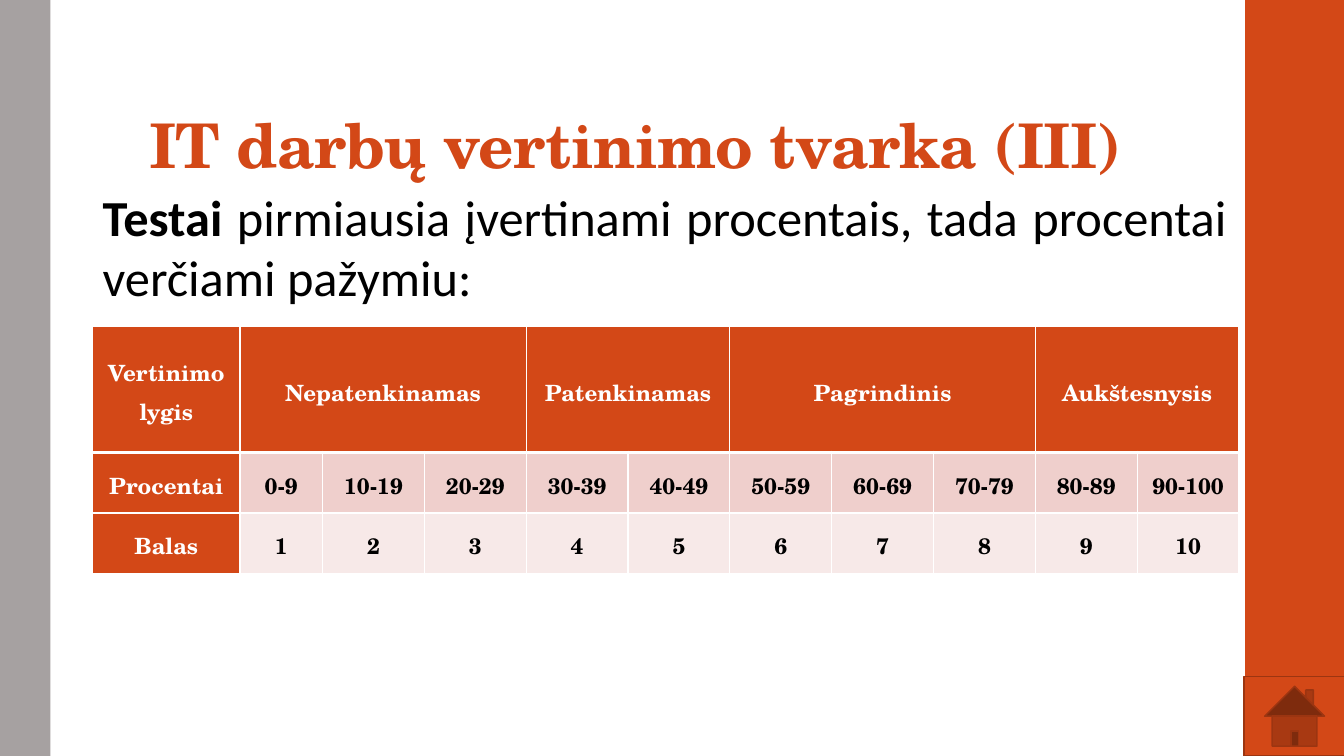
from lxml import etree
from pptx import Presentation
from pptx import util as u
from pptx.dml import color
from pptx.enum import shapes, text
from pptx.oxml import ns

ORANGE = "D34817"
SERIF = "TeX Gyre Schola"


def paint(target, value):
    if hasattr(target, "solid"):
        target.solid()
        target = target.fore_color
    else:
        target = target.color
    target.rgb = color.RGBColor.from_string(value)


def style(span, font, size, value, bold=True):
    span.font.name = font
    span.font.size = u.Pt(size)
    span.font.bold = bold
    paint(span.font, value)


deck = Presentation()
deck.slide_width = u.Inches(13.33)
deck.slide_height = u.Inches(7.5)
page = deck.slides.add_slide(deck.slide_layouts[5])

for kind, left, top, width, height, value in [
    (shapes.MSO_SHAPE.RECTANGLE, 12.35, 0, 1, 7.5, ORANGE),
    (shapes.MSO_SHAPE.RECTANGLE, 0, 0, 0.5, 7.5, "A6A1A1"),
    (shapes.MSO_SHAPE.ACTION_BUTTON_HOME, 12.34, 6.71, 1, 0.79, ORANGE),
]:
    shape = page.shapes.add_shape(
        kind, u.Inches(left), u.Inches(top), u.Inches(width), u.Inches(height))
    shape.shadow.inherit = False
    paint(shape.fill, value)
    if kind == shapes.MSO_SHAPE.ACTION_BUTTON_HOME:
        paint(shape.line, "9C3511")
        shape.line.width = u.Pt(1.1)
    else:
        shape.line.fill.background()

title = page.shapes.title
title.left, title.top = u.Inches(1.38), u.Inches(0.32)
title.width, title.height = u.Inches(10.6), u.Inches(1.53)
frame = title.text_frame
frame.text = "IT darbų vertinimo tvarka (III)"
frame.word_wrap = True
frame.auto_size = text.MSO_AUTO_SIZE.NONE
frame.vertical_anchor = text.MSO_ANCHOR.BOTTOM
frame.margin_top, frame.margin_bottom = u.Inches(0.03), u.Inches(0.05)
para = frame.paragraphs[0]
para.alignment = text.PP_ALIGN.LEFT
para.line_spacing = 0.9
style(para.runs[0], SERIF, 44, ORANGE)
para.runs[0].font._element.set("spc", "-50")

levels = [("Vertinimo lygis", 1), ("Nepatenkinamas", 3), ("Patenkinamas", 2),
          ("Pagrindinis", 3), ("Aukštesnysis", 2)]
header = [word for name, span in levels for word in [name] + [""] * (span - 1)]
percents = ["Procentai"] + [f"{low}-{low + 9}" for low in range(0, 90, 10)] + ["90-100"]
grades = ["Balas"] + [str(grade) for grade in range(1, 11)]
rows = [header, percents, grades]
row_fills = [ORANGE, "EFCFCC", "F7E9E8"]

table = page.shapes.add_table(
    3, 11, u.Inches(0.92), u.Inches(3.24), u.Inches(11.35), u.Inches(2.46)).table
for column, width in zip(table.columns, [1.46, 0.82] + [1.01] * 9):
    column.width = u.Inches(width)
for row, height in zip(table.rows, [1.25, 0.6, 0.6]):
    row.height = u.Inches(height)

for r, words in enumerate(rows):
    for c, word in enumerate(words):
        cell = table.cell(r, c)
        dark = r == 0 or c == 0
        paint(cell.fill, ORANGE if dark else row_fills[r])
        cell.vertical_anchor = text.MSO_ANCHOR.MIDDLE
        cell.margin_left = cell.margin_right = u.Inches(0.07)
        cell.margin_top = cell.margin_bottom = 0
        properties = cell._tc.get_or_add_tcPr()
        for place, side in enumerate(["lnL", "lnR", "lnT", "lnB"]):
            thick = (r, side) in [(0, "lnB"), (1, "lnT")]
            border = etree.Element(ns.qn(f"a:{side}"), w=str(u.Pt(3 if thick else 1)))
            fill = etree.SubElement(border, ns.qn("a:solidFill"))
            etree.SubElement(fill, ns.qn("a:srgbClr"), val="FFFFFF")
            properties.insert(place, border)
        if word:
            cell.text_frame.text = word
            para = cell.text_frame.paragraphs[0]
            para.alignment = text.PP_ALIGN.CENTER
            para.line_spacing = 1.15
            para.space_before, para.space_after = u.Pt(6), u.Pt(10)
            style(para.runs[0], SERIF, 16, "FFFFFF" if dark else "000000")

start = 0
for name, span in levels:
    if span > 1:
        table.cell(0, start).merge(table.cell(0, start + span - 1))
    start += span

box = page.shapes.add_textbox(
    u.Inches(0.92), u.Inches(1.79), u.Inches(11.35), u.Inches(1.31))
frame = box.text_frame
frame.word_wrap = True
frame.auto_size = text.MSO_AUTO_SIZE.SHAPE_TO_FIT_TEXT
frame.vertical_anchor = text.MSO_ANCHOR.MIDDLE
para = frame.paragraphs[0]
para.alignment = text.PP_ALIGN.JUSTIFY
for words, bold in [
    ("Testai ", True),
    ("pirmiausia įvertinami procentais, tada procentai verčiami pažymiu:", False),
]:
    span = para.add_run()
    span.text = words
    style(span, "Calibri", 36, "000000", bold)

deck.save("out.pptx")
